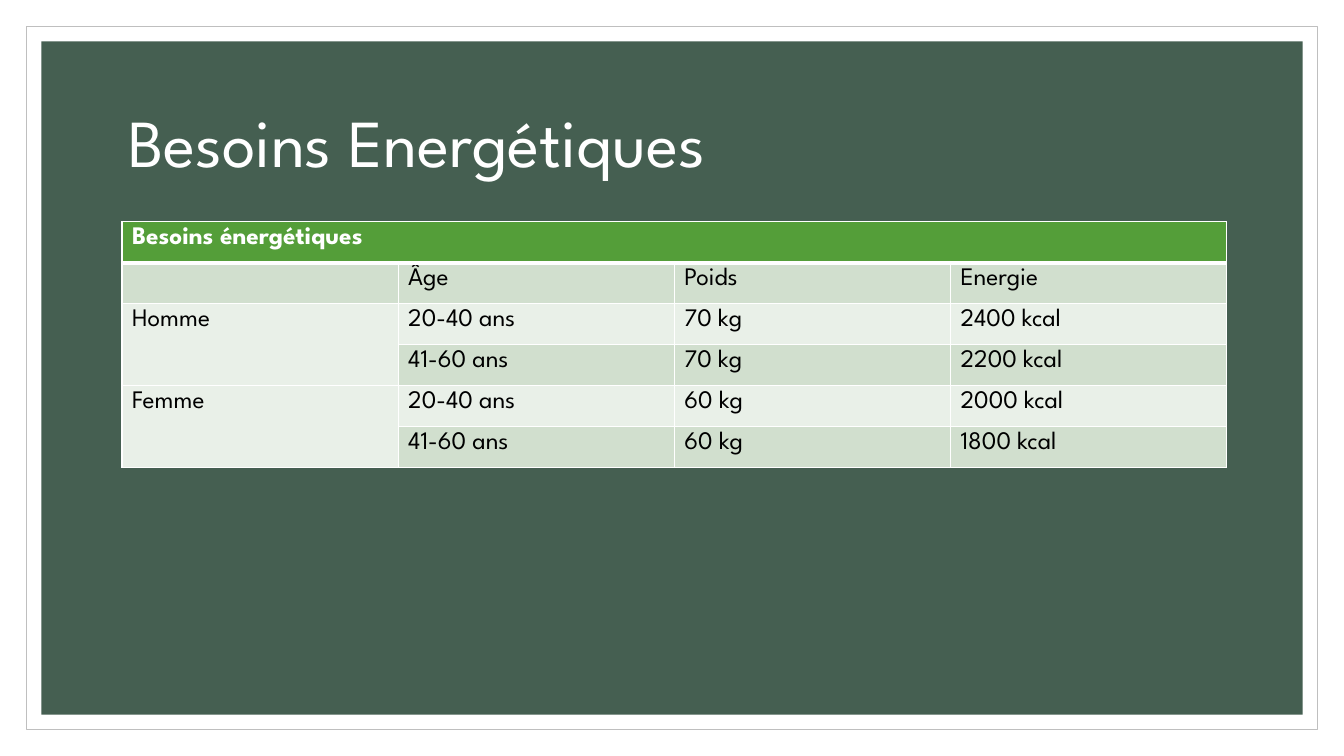
from dataclasses import dataclass

from lxml import etree
from pptx import Presentation
from pptx.dml.color import RGBColor
from pptx.enum.shapes import MSO_SHAPE
from pptx.enum.text import MSO_ANCHOR, MSO_AUTO_SIZE, PP_ALIGN
from pptx.oxml.ns import qn
from pptx.util import Inches, Pt

RECTANGLE = MSO_SHAPE.RECTANGLE
MIDDLE = MSO_ANCHOR.MIDDLE
NO_AUTOFIT = MSO_AUTO_SIZE.NONE
LEFT = PP_ALIGN.LEFT
TITLE_ONLY = 5


@dataclass(frozen=True)
class Theme:
    font: str = "League Spartan"
    title_size: int = 48
    table_size: int = 18
    white: str = "FFFFFF"
    black: str = "000000"
    panel: str = "455F51"
    frame_line: str = "BFBFBF"
    header: str = "549E39"
    bands: tuple = ("E9F0E8", "D1DFCE")


THEME = Theme()
WIDTH, HEIGHT = Inches(13.333), Inches(7.5)
COLUMN_WIDTH, ROW_HEIGHT = Inches(2.74), Inches(0.406)
ROWS = [
    ["Besoins énergétiques", "", "", ""],
    ["", "Âge", "Poids", "Energie"],
    ["Homme", "20-40 ans", "70 kg", "2400 kcal"],
    ["", "41-60 ans", "70 kg", "2200 kcal"],
    ["Femme", "20-40 ans", "60 kg", "2000 kcal"],
    ["", "41-60 ans", "60 kg", "1800 kcal"],
]
MERGES = [((0, 0), (0, 3)), ((2, 0), (3, 0)), ((4, 0), (5, 0))]


def rgb(color):
    return RGBColor.from_string(color)


def style_text(tf, size, color, bold=False):
    for p in tf.paragraphs:
        for r in p.runs:
            r.font.name = THEME.font
            r.font.size = Pt(size)
            r.font.bold = bold
            r.font.color.rgb = rgb(color)


def add_panel(s, margin, fill, line=None):
    margin = Inches(margin)
    sp = s.shapes.add_shape(RECTANGLE, margin, margin,
                            WIDTH - 2 * margin, HEIGHT - 2 * margin)
    sp.shadow.inherit = False
    sp.fill.solid()
    sp.fill.fore_color.rgb = rgb(fill)
    if line:
        sp.line.color.rgb = rgb(line)
        sp.line.width = Pt(0.5)
    else:
        sp.line.fill.background()


def place_title(s, text):
    title = s.shapes.title
    title.left, title.top = Inches(1.17), Inches(0.7)
    title.width, title.height = Inches(11), Inches(1.5)
    tf = title.text_frame
    tf.text = text
    tf.word_wrap = True
    tf.auto_size = NO_AUTOFIT
    tf.vertical_anchor = MIDDLE
    p = tf.paragraphs[0]
    p.alignment = LEFT
    p.line_spacing = 0.9
    style_text(tf, THEME.title_size, THEME.white)
    title.element.getparent().append(title.element)


def set_borders(cell, widths):
    tcPr = cell._tc.get_or_add_tcPr()
    for i, (side, width) in enumerate(widths.items()):
        ln = etree.Element(qn(f"a:ln{side}"), w=str(Pt(width)))
        fill = etree.SubElement(ln, qn("a:solidFill"))
        etree.SubElement(fill, qn("a:srgbClr"), val=THEME.white)
        tcPr.insert(i, ln)


def style_cell(cell, row, column):
    is_header = row == 0
    band = 0 if column == 0 and row > 1 else row % 2
    cell.fill.solid()
    cell.fill.fore_color.rgb = rgb(THEME.header if is_header else THEME.bands[band])
    style_text(cell.text_frame, THEME.table_size,
               THEME.white if is_header else THEME.black, is_header)
    set_borders(cell, {"L": 1, "R": 1,
                       "T": 3 if row == 1 else 1,
                       "B": 3 if is_header else 1})


def add_needs_table(s):
    count = len(ROWS[0])
    frame = s.shapes.add_table(len(ROWS), count, Inches(1.21), Inches(2.2),
                               COLUMN_WIDTH * count, ROW_HEIGHT * len(ROWS))
    table = frame.table
    for column in table.columns:
        column.width = COLUMN_WIDTH
    for i, texts in enumerate(ROWS):
        table.rows[i].height = ROW_HEIGHT
        for j, text in enumerate(texts):
            cell = table.cell(i, j)
            cell.text_frame.text = text
            style_cell(cell, i, j)
    for start, end in MERGES:
        table.cell(*start).merge(table.cell(*end))


def main():
    prs = Presentation()
    prs.slide_width, prs.slide_height = WIDTH, HEIGHT
    s = prs.slides.add_slide(prs.slide_layouts[TITLE_ONLY])
    s.background.fill.solid()
    s.background.fill.fore_color.rgb = rgb(THEME.white)
    add_panel(s, 0.26, THEME.white, THEME.frame_line)
    add_panel(s, 0.41, THEME.panel)
    place_title(s, "Besoins Energétiques")
    add_needs_table(s)
    prs.save("out.pptx")


if __name__ == "__main__":
    main()
